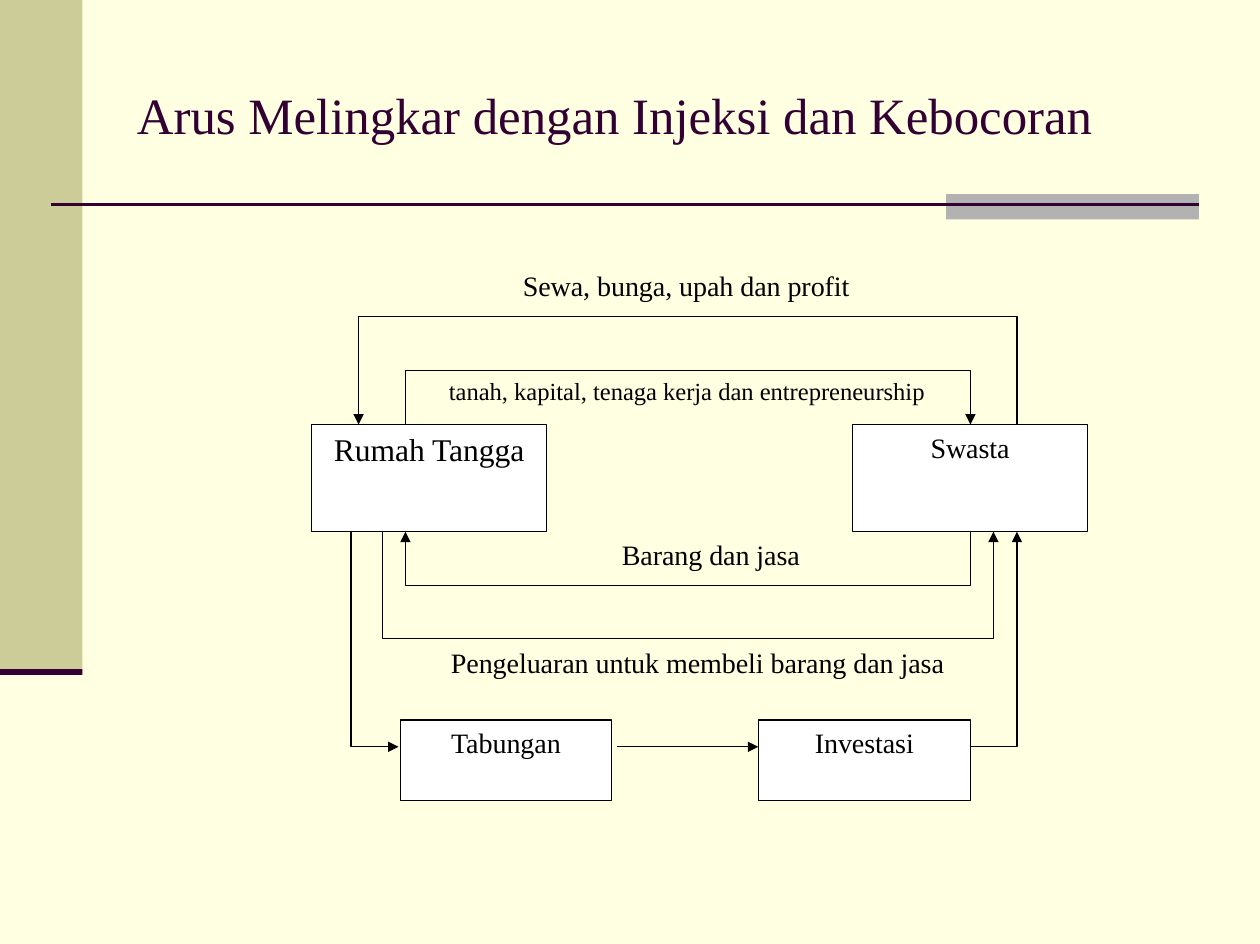
from dataclasses import dataclass

from lxml import etree
from pptx import Presentation
from pptx.dml.color import RGBColor
from pptx.enum import shapes, text
from pptx.oxml import ns
from pptx.util import Pt


@dataclass(frozen=True)
class Theme:
    font: str = "Times New Roman"
    page: str = "FFFFE1"
    sidebar: str = "CCCC99"
    accent: str = "B2B2B2"
    dark: str = "330033"
    box: str = "FFFFFF"
    ink: str = "000000"
    title_size: float = 29
    large_size: float = 18
    body_size: float = 16
    small_size: float = 14
    rule_width: float = 1.5
    line_width: float = 0.75
    tracking: float = -0.03


THEME = Theme()

# Shared edges of the diagram, in points
BOX_TOP, BOX_BOTTOM = 241.9, 303
LOWER_TOP, LOWER_FLOW = 410.2, 425.5
OUTER_RIGHT = 579.4
INNER_LEFT, INNER_RIGHT = 231, 552.9


def color(value):
    return RGBColor.from_string(value)


def write(shape, words, size, ink, align, top=0):
    """Set one line of text, with only a top inset."""
    tf = shape.text_frame
    tf.margin_left = tf.margin_right = tf.margin_bottom = 0
    tf.margin_top = Pt(top)
    tf.vertical_anchor = text.MSO_ANCHOR.TOP
    tf.auto_size = text.MSO_AUTO_SIZE.NONE
    tf.word_wrap = True
    p = tf.paragraphs[0]
    p.alignment = align
    p.space_before = Pt(0)
    r = p.add_run()
    r.text = words
    r.font.name = THEME.font
    r.font.size = Pt(size)
    r.font.color.rgb = color(ink)
    r.font._element.set("spc", str(round(THEME.tracking * 100)))


def add_rect(s, left, top, width, height, fill):
    sp = s.shapes.add_shape(shapes.MSO_SHAPE.RECTANGLE,
                            Pt(left), Pt(top), Pt(width), Pt(height))
    sp.shadow.inherit = False
    sp.fill.solid()
    sp.fill.fore_color.rgb = color(fill)
    sp.line.fill.background()
    return sp


def set_line(shape, ink, width):
    shape.line.color.rgb = color(ink)
    shape.line.width = Pt(width)


def add_box(s, words, left, top, width, height, size=THEME.body_size):
    sp = add_rect(s, left, top, width, height, THEME.box)
    set_line(sp, THEME.ink, THEME.line_width)
    write(sp, words, size, THEME.ink, text.PP_ALIGN.CENTER, top=3.2)


def add_label(s, words, center, top, width, size=THEME.body_size):
    sp = s.shapes.add_textbox(Pt(center - width / 2), Pt(top),
                              Pt(width), Pt(size * 1.25))
    write(sp, words, size, THEME.ink, text.PP_ALIGN.CENTER)


def add_line(s, start, end, ink, width):
    line = s.shapes.add_connector(shapes.MSO_CONNECTOR.STRAIGHT,
                                  *map(Pt, start + end))
    set_line(line, ink, width)
    etree.SubElement(line._element.spPr, ns.qn("a:effectLst"))
    return line


def add_arrowhead(line):
    etree.SubElement(line.line._get_or_add_ln(), ns.qn("a:tailEnd"),
                     type="triangle", w="med", len="med")


def add_bent_flow(s, *points):
    """Draw one open outline through the points, with an arrowhead at the last."""
    start, *others = [tuple(map(Pt, point)) for point in points]
    builder = s.shapes.build_freeform(*start)
    builder.add_line_segments(others, close=False)
    sp = builder.convert_to_shape()
    sp.shadow.inherit = False
    sp.fill.background()
    set_line(sp, THEME.ink, THEME.line_width)
    add_arrowhead(sp)


def add_loop(s, start_x, end_x, side, turn):
    """Leave a box side, run along the turn height and return to that side."""
    add_bent_flow(s, (start_x, side), (start_x, turn), (end_x, turn), (end_x, side))


def add_backdrop(s):
    s.background.fill.solid()
    s.background.fill.fore_color.rgb = color(THEME.page)
    add_rect(s, 0, 0, 47, 383, THEME.sidebar)
    add_rect(s, 539, 110.7, 144, 14.3, THEME.accent)
    add_line(s, (29, 116.6), (683, 116.6), THEME.dark, THEME.rule_width)
    add_rect(s, 0, 381.3, 47, 3.3, THEME.dark)


def add_title(s, words):
    title = s.shapes.title
    title.left, title.top, title.width, title.height = map(Pt, (78, 47.6, 570, 36))
    write(title, words, THEME.title_size, THEME.dark, text.PP_ALIGN.LEFT)


def main():
    prs = Presentation()
    prs.slide_width, prs.slide_height = Pt(717.84), Pt(537.84)
    s = prs.slides.add_slide(prs.slide_layouts[5])

    add_backdrop(s)
    add_title(s, "Arus Melingkar dengan Injeksi dan Kebocoran")

    box_height = BOX_BOTTOM - BOX_TOP
    add_box(s, "Rumah Tangga", 177.6, BOX_TOP, 133.8, box_height, THEME.large_size)
    add_box(s, "Swasta", 485.8, BOX_TOP, 133.8, box_height)
    add_box(s, "Tabungan", 228, LOWER_TOP, 120.6, 46)
    add_box(s, "Investasi", 432, LOWER_TOP, 120.9, 46)

    add_loop(s, OUTER_RIGHT, 204.3, BOX_TOP, 180.5)
    add_loop(s, INNER_LEFT, INNER_RIGHT, BOX_TOP, 211)
    add_loop(s, INNER_RIGHT, INNER_LEFT, BOX_BOTTOM, 333.5)
    add_loop(s, 218, 566, BOX_BOTTOM, 364)
    add_bent_flow(s, (200, BOX_BOTTOM), (200, LOWER_FLOW), (227, LOWER_FLOW))
    add_arrowhead(add_line(s, (351.5, LOWER_FLOW), (432, LOWER_FLOW),
                           THEME.ink, THEME.line_width))
    add_bent_flow(s, (INNER_RIGHT, LOWER_FLOW), (OUTER_RIGHT, LOWER_FLOW),
                  (OUTER_RIGHT, BOX_BOTTOM))

    add_label(s, "Sewa, bunga, upah dan profit", 391, 153.2, 200)
    add_label(s, "tanah, kapital, tenaga kerja dan entrepreneurship",
              391.3, 214.2, 290, THEME.small_size)
    add_label(s, "Barang dan jasa", 405, 306.4, 120)
    add_label(s, "Pengeluaran untuk membeli barang dan jasa", 397.5, 368, 300)

    prs.save("out.pptx")


if __name__ == "__main__":
    main()
